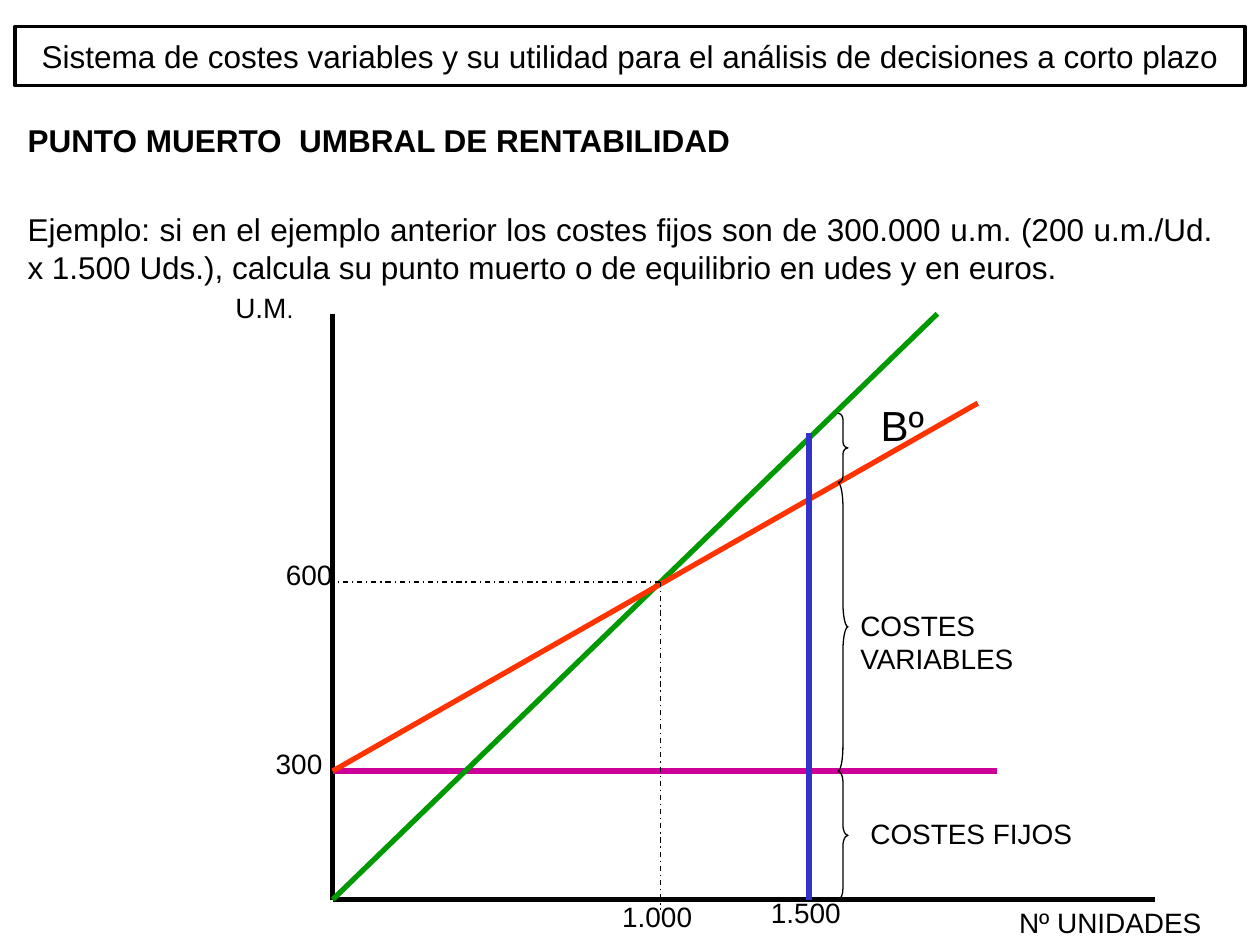
from collections import namedtuple

from lxml import etree
from pptx import Presentation
from pptx import util as u
from pptx.dml.color import RGBColor
from pptx.enum import dml, shapes, text
from pptx.oxml.ns import qn

COLOURS = {"ink": "000000", "fixed": "CC0099", "income": "009900",
           "total": "FF3300", "volume": "3333CC"}
FONT = "Arial"
CELL = u.Inches(0.1)
Box = namedtuple("Box", "left top width height")

TITLE_BOX = Box(1.2, 2.1, 97.6, 4.7)
BODY_BOX = Box(1.2, 9.1, 96.1, 20)
CHART_BOX = Box(26.4, 24.9, 65.3, 46.5)

TITLE = "Sistema de costes variables y su utilidad para el análisis de decisiones a corto plazo"
HEADING = "PUNTO MUERTO  UMBRAL DE RENTABILIDAD"
EXAMPLE = ("Ejemplo: si en el ejemplo anterior los costes fijos son de 300.000 u.m. "
           "(200 u.m./Ud. x 1.500 Uds.), calcula su punto muerto o de equilibrio "
           "en udes y en euros.")


def grid(*cells):
    """Turn grid cells into slide lengths."""
    return [round(cell * CELL) for cell in cells]


def colour(name):
    """Return a named colour of the slide."""
    return RGBColor.from_string(COLOURS[name])


def set_values(target, **values):
    """Set each given attribute on the target."""
    for name, value in values.items():
        setattr(target, name, value)


def add_span(para, words, size, bold=False):
    """Add one formatted run to a paragraph."""
    span = para.add_run()
    span.text = words
    set_values(span.font, name=FONT, size=u.Pt(size), bold=bold)
    span.font.color.rgb = colour("ink")


def style_outline(shape, name, points):
    """Give a shape or line its colour and weight."""
    shape.line.color.rgb = colour(name)
    shape.line.width = u.Pt(points)


def add_line(page, start, end, name="ink", points=3, dash=None):
    """Draw a straight line between two grid points."""
    line = page.shapes.add_connector(shapes.MSO_CONNECTOR.STRAIGHT, *grid(*start, *end))
    style_outline(line, name, points)
    if dash:
        line.line.dash_style = dash
    etree.SubElement(line._element.spPr, qn("a:effectLst"))


def add_outline(page, kind, box, points):
    """Draw an unfilled preset shape with a black outline."""
    shape = page.shapes.add_shape(kind, *grid(*box))
    shape.shadow.inherit = False
    shape.fill.background()
    style_outline(shape, "ink", points)
    return shape


def add_label(page, box, spans):
    """Place a short chart label made of sized spans."""
    label = page.shapes.add_textbox(*grid(*box))
    label.text_frame.word_wrap = True
    para = label.text_frame.paragraphs[0]
    para.space_before = u.Pt(1)
    for words, size in spans:
        add_span(para, words, size)


def build_title(page, box):
    """Build the framed title strip."""
    frame = add_outline(page, shapes.MSO_SHAPE.RECTANGLE, box, 2).text_frame
    set_values(frame, word_wrap=True, vertical_anchor=text.MSO_ANCHOR.MIDDLE)
    para = frame.paragraphs[0]
    para.alignment = text.PP_ALIGN.CENTER
    add_span(para, TITLE, 18)


def build_body(page, box):
    """Build the heading and the worked example."""
    frame = page.shapes.add_textbox(*grid(*box)).text_frame
    frame.word_wrap = True
    paras = [frame.paragraphs[0], frame.add_paragraph()]
    for para, words, gap, bold in zip(paras, (HEADING, EXAMPLE), (2, 29.5), (True, False)):
        set_values(para, alignment=text.PP_ALIGN.JUSTIFY, space_before=u.Pt(gap))
        add_span(para, words, 18, bold)


def build_chart(page, box):
    """Build the break-even diagram inside its box."""
    left, top = box.left, box.top
    right, base = left + box.width, top + box.height
    fixed_y = base - 10.2
    even_x, even_y = left + 26, base - 25.2
    volume_x, brace_x = left + 37.8, left + 40.1
    origin = (left, base)
    dash = dml.MSO_LINE.DASH_DOT

    add_line(page, (left, top), origin)
    add_line(page, origin, (right, base))
    add_line(page, (left, fixed_y), (left + 52.7, fixed_y), "fixed")
    add_line(page, origin, (left + 48, top), "income")
    add_line(page, (left, fixed_y), (left + 51.2, top + 7.1), "total")
    for end in ((even_x, base + 0.8), (left, even_y)):
        add_line(page, (even_x, even_y), end, points=0.75, dash=dash)
    add_line(page, (volume_x, top + 9.5), (volume_x, base), "volume")

    levels = (base, fixed_y, top + 13.4, top + 7.9)
    for low, high, curve in zip(levels, levels[1:], (1.07, 2.44, 0.59)):
        brace = add_outline(page, shapes.MSO_SHAPE.RIGHT_BRACE,
                            Box(brace_x, high, 0.8, low - high), 0.75)
        brace.adjustments[0] = curve

    labels = (
        (42.5, 6.3, 6.5, [("Bº", 24)]),
        (40.9, 22.9, 23, [("COSTES VARIABLES", 16)]),
        (41.7, 39.4, 23.6, [("COSTES FIJOS", 16)]),
        (-8.7, -2.3, 8.7, [("U.M", 16), (".", 14)]),
        (53.5, 46.5, 17, [("Nº UNIDADES", 16)]),
        (-4.7, 18.9, 8.7, [("600", 16)]),
        (-5.5, 33.9, 8.7, [("300", 16)]),
        (22, 46, 8.7, [("1.000", 16)]),
        (33.8, 45.7, 8.7, [("1.500", 16)]),
    )
    for column, row, width, spans in labels:
        add_label(page, Box(left + column, top + row, width, 3.7), spans)


def main():
    """Build the slide and save the deck."""
    deck = Presentation()
    set_values(deck, slide_width=u.Inches(10), slide_height=u.Inches(7.5))
    page = deck.slides.add_slide(deck.slide_layouts[6])
    build_title(page, TITLE_BOX)
    build_body(page, BODY_BOX)
    build_chart(page, CHART_BOX)
    deck.save("out.pptx")


if __name__ == "__main__":
    main()
